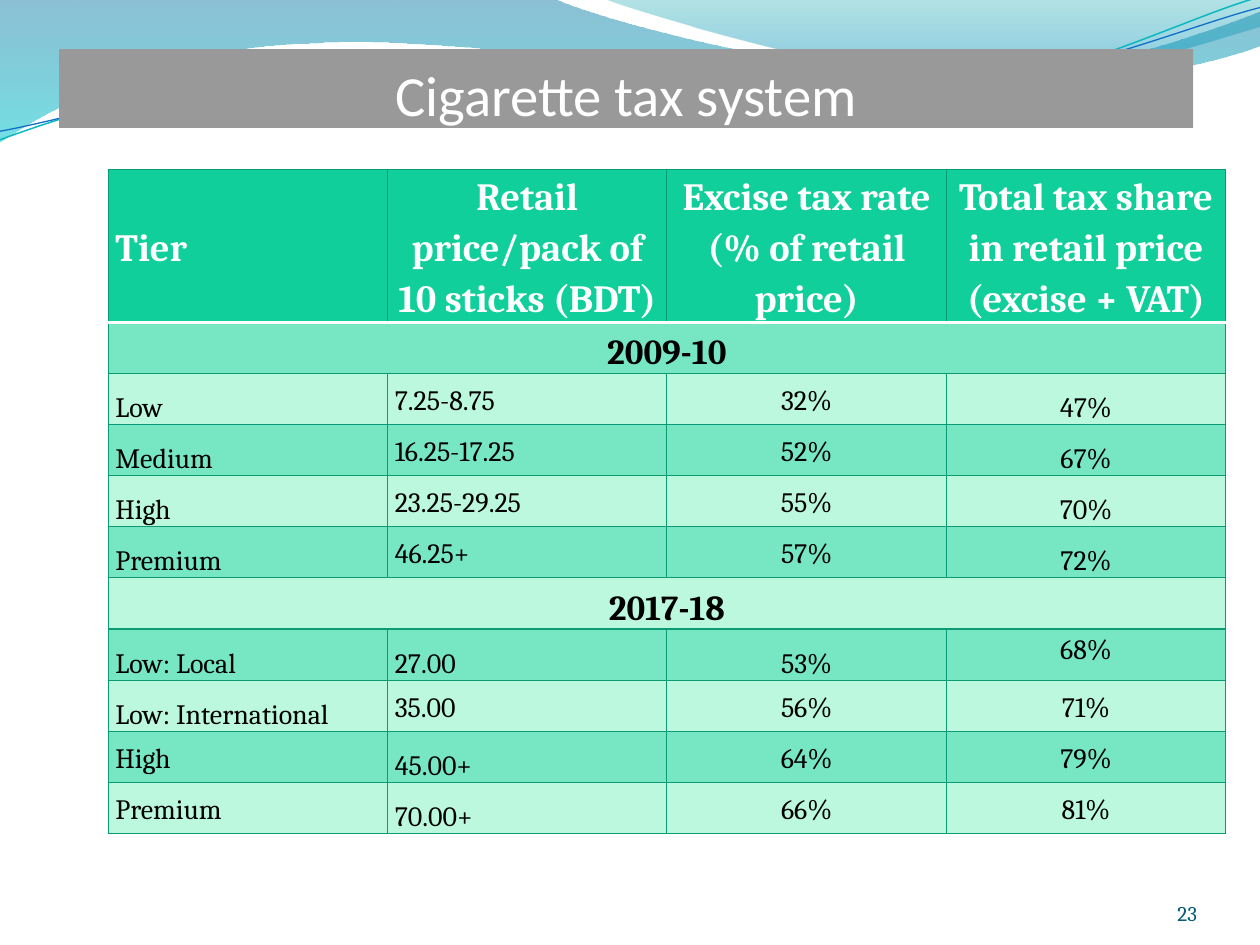
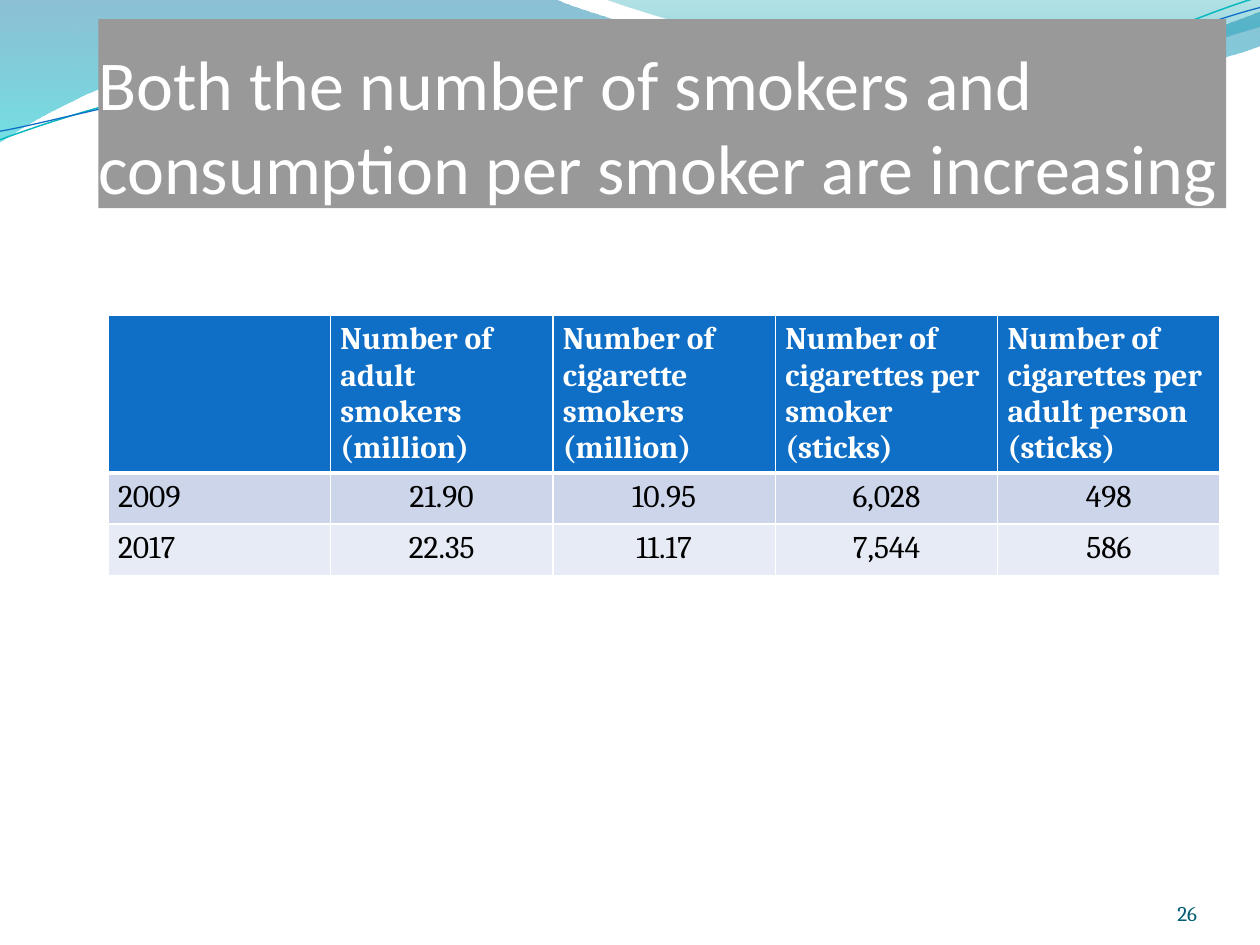
import dataclasses
import typing

import lxml.etree
import pptx
import pptx.dml.color
import pptx.enum.shapes
import pptx.enum.text
import pptx.oxml.ns
import pptx.util

Pt = pptx.util.Pt
RGBColor = pptx.dml.color.RGBColor
ANCHOR = pptx.enum.text.MSO_ANCHOR
ALIGN = pptx.enum.text.PP_ALIGN
qn = pptx.oxml.ns.qn

# Colours
WHITE = RGBColor(0xFF, 0xFF, 0xFF)
BLACK = RGBColor(0x00, 0x00, 0x00)
TITLE_GREY = RGBColor(0x99, 0x99, 0x99)
NUMBER_TEAL = RGBColor(0x04, 0x5D, 0x75)
GREEN = RGBColor(0x10, 0xCF, 0x9B)
GREEN_MEDIUM = RGBColor(0x77, 0xE7, 0xC3)
GREEN_LIGHT = RGBColor(0xBB, 0xF8, 0xDE)
GREEN_BORDER = RGBColor(0x0A, 0x9B, 0x74)
BLUE = RGBColor(0x0F, 0x6F, 0xC6)
BLUE_MEDIUM = RGBColor(0xCC, 0xD5, 0xEA)
BLUE_LIGHT = RGBColor(0xE7, 0xEB, 0xF5)
WAVE_BLUE = RGBColor(0x00, 0x74, 0xA1)
WAVE_CYAN = RGBColor(0x00, 0xC6, 0xCF)
CREST_TEAL = RGBColor(0x00, 0xA1, 0xA9)
CREST_BLUE = RGBColor(0x00, 0x8B, 0xBF)
LINE_TEAL = RGBColor(0x0A, 0xB8, 0xBF)

TITLE_FONT = "Calibri"
BODY_FONT = "Cambria"
ANCHORS = {"t": ANCHOR.TOP, "m": ANCHOR.MIDDLE, "b": ANCHOR.BOTTOM}

Point = tuple[float, float]


class Box(typing.NamedTuple):
    left: float
    top: float
    width: float
    height: float


class Stop(typing.NamedTuple):
    position: float
    color: RGBColor
    opacity: int


class Border(typing.NamedTuple):
    color: RGBColor
    width: float


@dataclasses.dataclass
class Wave:
    """Each segment holds one point for a line or three for a Bezier curve."""
    start: Point
    segments: list[tuple[Point, ...]]
    stops: tuple[Stop, ...] = ()
    line: Border | None = None
    rotation: float = 0


@dataclasses.dataclass
class Row:
    cells: list[str]
    anchors: str


@dataclasses.dataclass
class TableStyle:
    fills: tuple[RGBColor, RGBColor, RGBColor]  # header, odd rows, even rows
    border: Border
    header_rule: Border
    header_height: float
    header_size: float
    body_size: float
    margins: Point
    line_spacing: float
    header_align: ALIGN
    left_columns: int


@dataclasses.dataclass
class TableSlide:
    title: str
    title_box: Box
    title_size: float
    title_align: ALIGN
    table_box: Box
    style: TableStyle
    rows: list[Row]
    number: str


ROW_HEIGHT = 29.2
SECTION_SIZE = 20
NUMBER_BOX = Box(624, 500.4, 60, 28.8)

WAVES = [
    Wave((0, 0), [
        ((316.8, -0.7),),
        ((342.7, 12.2), (478.1, 45.4), (545.8, 45.4)),
        ((614.2, 45.4), (689.8, 18.7), (720, 6.5)),
        ((720.7, 25.9),),
        ((707.8, 31.7), (626.4, 54.7), (537.1, 54)),
        ((447.8, 54), (275, 20.2), (185, 24.5)),
        ((92.9, 25.9), (33.1, 59.8), (-0.7, 81.4)),
        ((0, 0),),
    ], stops=(Stop(0, WAVE_BLUE, 45), Stop(1, WAVE_CYAN, 55))),
    Wave((344.9, -0.7), [
        ((366.5, 7.9), (491, 44.6), (553.7, 46.8)),
        ((616.3, 49.7), (691.9, 23), (720, 15.1)),
        ((720, 0),),
        ((344.9, -0.7),),
    ], stops=(Stop(0, CREST_TEAL, 30), Stop(0.8, CREST_BLUE, 45))),
    Wave((-1.4, 62.9), [
        ((33.8, 51.7), (114.1, 29.4), (199.8, 29.9)),
        ((284.8, 30.3), (425.8, 67.3), (512.4, 64.9)),
        ((599, 62.4), (676.4, 25.7), (720.2, 15.6)),
    ], line=Border(LINE_TEAL, 0.85), rotation=357.3),
    Wave((-1.1, 58), [
        ((32.9, 53.8), (118.3, 32.5), (204.1, 33)),
        ((290.6, 33.4), (428.9, 63.8), (515.5, 61.4)),
        ((601.3, 59.6), (678.4, 30.1), (721.4, 21.3)),
    ], line=Border(BLUE, 0.75), rotation=357.3),
]

TAX_STYLE = TableStyle(
    (GREEN, GREEN_MEDIUM, GREEN_LIGHT), Border(GREEN_BORDER, 0.75), Border(WHITE, 2),
    87, 22, 16, (4.2, 0), 1.15, ALIGN.CENTER, 2)
SMOKER_STYLE = TableStyle(
    (BLUE, BLUE_MEDIUM, BLUE_LIGHT), Border(WHITE, 1), Border(WHITE, 3),
    89, 18, 18, (5.7, 3.6), 1.0, ALIGN.LEFT, 1)

SLIDES = [
    TableSlide(
        "Cigarette tax system", Box(33.8, 28.1, 648, 45), 32.4, ALIGN.CENTER,
        Box(61.8, 96.8, 638.6, 379), TAX_STYLE, [
            Row(["Tier", "Retail price/pack of 10 sticks (BDT)",
                 "Excise tax rate (% of retail price)",
                 "Total tax share in retail price (excise + VAT)"], "mmmb"),
            Row(["2009-10"], "b"),
            Row(["Low", "7.25-8.75", "32%", "47%"], "bmmb"),
            Row(["Medium", "16.25-17.25", "52%", "67%"], "bmmb"),
            Row(["High", "23.25-29.25", "55%", "70%"], "bmmb"),
            Row(["Premium", "46.25+", "57%", "72%"], "bmmb"),
            Row(["2017-18"], "b"),
            Row(["Low: Local", "27.00", "53%", "68%"], "bbbt"),
            Row(["Low: International", "35.00", "56%", "71%"], "bmmm"),
            Row(["High", "45.00+", "64%", "79%"], "mbmm"),
            Row(["Premium", "70.00+", "66%", "81%"], "mbmm"),
        ], "23"),
    TableSlide(
        "Both the number of smokers and consumption per smoker are increasing",
        Box(56.2, 11, 644.4, 108), 40, ALIGN.LEFT,
        Box(61.8, 180, 635.5, 147.4), SMOKER_STYLE, [
            Row(["", "Number of adult smokers (million)",
                 "Number of cigarette smokers (million)",
                 "Number of cigarettes per smoker (sticks)",
                 "Number of cigarettes per adult person (sticks)"], "ttttt"),
            Row(["2009", "21.90", "10.95", "6,028", "498"], "ttttt"),
            Row(["2017", "22.35", "11.17", "7,544", "586"], "ttttt"),
        ], "26"),
]


def set_values(target: typing.Any, values: dict[str, typing.Any]) -> None:
    for name, value in values.items():
        setattr(target, name, value)


def place(shape: typing.Any, box: Box) -> None:
    set_values(shape, {name: Pt(value) for name, value in box._asdict().items()})


def write_text(frame: typing.Any, text: str, color: RGBColor, align: ALIGN,
               font: dict[str, typing.Any], line_spacing: float = 1.0) -> None:
    paragraph = frame.paragraphs[0]
    set_values(paragraph, {"alignment": align, "line_spacing": line_spacing})
    if text:
        run = paragraph.add_run()
        run.text = text
        set_values(run.font, font)
        run.font.color.rgb = color


# Wave decoration, kept on the slide master
def bend_segments(shape: typing.Any, wave: Wave) -> None:
    """Join the three line steps of each curved segment into one Bezier step."""
    steps = iter(list(shape.element.iter(qn("a:lnTo"))))
    for segment in wave.segments:
        group = [next(steps) for _ in segment]
        if len(group) == 3:
            curve = lxml.etree.Element(qn("a:cubicBezTo"))
            group[0].addprevious(curve)
            for step in group:
                curve.append(step[0])
                step.getparent().remove(step)


def draw_wave(slide: typing.Any, wave: Wave) -> typing.Any:
    points = [(x * 100, y * 100) for segment in wave.segments for x, y in segment]
    builder = slide.shapes.build_freeform(wave.start[0] * 100, wave.start[1] * 100,
                                          scale=float(Pt(0.01)))
    builder.add_line_segments(points, close=wave.line is None)
    shape = builder.convert_to_shape()
    bend_segments(shape, wave)
    shape.shadow.inherit = False
    shape.rotation = wave.rotation
    if wave.line:
        shape.fill.background()
        shape.line.color.rgb = wave.line.color
        shape.line.width = Pt(wave.line.width)
        return shape
    shape.line.fill.background()
    shape.fill.gradient()
    shape.fill.gradient_angle = 270
    for gradient_stop, stop in zip(shape.fill.gradient_stops, wave.stops):
        gradient_stop.position = stop.position
        gradient_stop.color.rgb = stop.color
    for element, stop in zip(shape.element.iter(qn("a:gs")), wave.stops):
        lxml.etree.SubElement(element[0], qn("a:alpha"), val=str(stop.opacity * 1000))
    return shape


def decorate_master(master: typing.Any, slide: typing.Any) -> None:
    for index, wave in enumerate(WAVES):
        element = draw_wave(slide, wave).element
        element.find(".//" + qn("p:cNvPr")).set("id", str(100 + index))
        master.shapes.element.insert(2 + index, element)


# Tables
def set_borders(cell: typing.Any, top: Border, bottom: Border, side: Border) -> None:
    properties = cell._tc.get_or_add_tcPr()
    borders = {"a:lnL": side, "a:lnR": side, "a:lnT": top, "a:lnB": bottom}
    for index, (tag, border) in enumerate(borders.items()):
        line = lxml.etree.Element(qn(tag), w=str(Pt(border.width)))
        fill = lxml.etree.SubElement(line, qn("a:solidFill"))
        lxml.etree.SubElement(fill, qn("a:srgbClr"), val=str(border.color))
        properties.insert(index, line)


def draw_table(slide: typing.Any, box: Box, style: TableStyle, rows: list[Row]) -> None:
    column_count = len(rows[0].cells)
    table = slide.shapes.add_table(len(rows), column_count, *map(Pt, box)).table
    for column in table.columns:
        column.width = Pt(box.width / column_count)
    side_margin, end_margin = map(Pt, style.margins)
    for r, row in enumerate(rows):
        header, section = r == 0, len(row.cells) == 1
        table.rows[r].height = Pt(style.header_height if header else ROW_HEIGHT)
        size = style.header_size if header else SECTION_SIZE if section else style.body_size
        font = {"name": BODY_FONT, "size": Pt(size), "bold": header or section}
        for c in range(column_count):
            cell = table.cell(r, c)
            set_values(cell, {"margin_left": side_margin, "margin_right": side_margin,
                              "margin_top": end_margin, "margin_bottom": end_margin})
            cell.fill.solid()
            cell.fill.fore_color.rgb = style.fills[0 if header else 2 - r % 2]
            set_borders(cell, style.header_rule if r == 1 else style.border,
                        style.header_rule if header else style.border, style.border)
        if section:
            table.cell(r, 0).merge(table.cell(r, column_count - 1))
        for c, (text, anchor) in enumerate(zip(row.cells, row.anchors)):
            cell = table.cell(r, c)
            cell.vertical_anchor = ANCHORS[anchor]
            if header:
                align = ALIGN.LEFT if c == 0 else style.header_align
            else:
                align = ALIGN.LEFT if c < style.left_columns and not section else ALIGN.CENTER
            write_text(cell.text_frame, text, WHITE if header else BLACK, align, font,
                       style.line_spacing)


# Title band and slide number
def draw_title(slide: typing.Any, content: TableSlide) -> None:
    title = slide.shapes.title
    place(title, content.title_box)
    title.fill.solid()
    title.fill.fore_color.rgb = TITLE_GREY
    set_values(title.text_frame, {
        "margin_left": 0, "margin_right": 0, "margin_top": Pt(3.6), "margin_bottom": 0,
        "word_wrap": True, "vertical_anchor": ANCHOR.BOTTOM,
        "auto_size": pptx.enum.text.MSO_AUTO_SIZE.NONE})
    write_text(title.text_frame, content.title, WHITE, content.title_align,
               {"name": TITLE_FONT, "size": Pt(content.title_size)})


def draw_number(slide: typing.Any, number: str) -> None:
    frame = slide.shapes.add_textbox(*map(Pt, NUMBER_BOX)).text_frame
    set_values(frame, {"margin_left": 0, "margin_right": 0, "margin_top": 0, "margin_bottom": 0,
                       "word_wrap": True, "vertical_anchor": ANCHOR.BOTTOM})
    write_text(frame, number, NUMBER_TEAL, ALIGN.RIGHT, {"name": BODY_FONT, "size": Pt(12)})


def main() -> None:
    presentation = pptx.Presentation()
    set_values(presentation, {"slide_width": Pt(720), "slide_height": Pt(540)})
    layout = presentation.slide_layouts.get_by_name("Title Only")
    for index, content in enumerate(SLIDES):
        slide = presentation.slides.add_slide(layout)
        if index == 0:
            decorate_master(presentation.slide_master, slide)
        draw_title(slide, content)
        draw_table(slide, content.table_box, content.style, content.rows)
        draw_number(slide, content.number)
    presentation.save("out.pptx")


if __name__ == "__main__":
    main()
